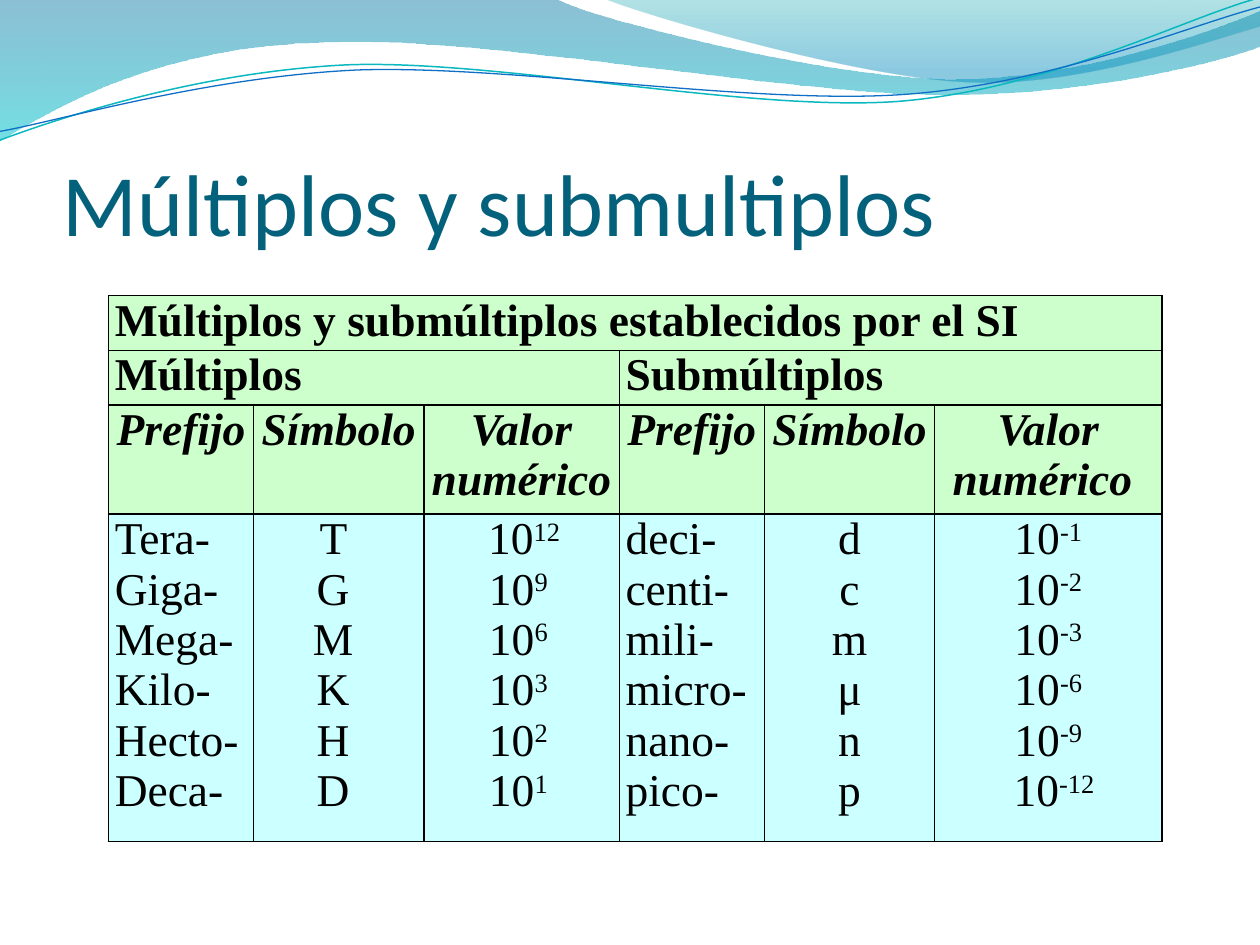
from lxml.etree import SubElement
from pptx import Presentation
from pptx.dml.color import RGBColor
from pptx.enum.text import MSO_ANCHOR, PP_ALIGN
from pptx.oxml import parse_xml
from pptx.oxml.ns import nsdecls, qn
from pptx.util import Pt

COLORS = {
    "title": "04617B", "text": "000000", "border": "000000",
    "header": "CCFFCC", "body": "CCFFFF",
    "teal_line": "0AB8BF", "blue_line": "0F6FC6",
    "deep_blue": "0074A1", "cyan": "00C6CF", "teal": "00A1A9", "sky": "008BBF",
}
TITLE_FONT = {"name": "Calibri", "size": Pt(50), "bold": False}
TABLE_FONT = {"name": "Times New Roman", "size": Pt(26)}

# Each wave: start point, then line ends (2 numbers) or Bézier curves (6 numbers)
BANDS = [
    ([(0, 0), (317, -1), (343, 12, 478, 45, 546, 45), (614, 45, 690, 19, 720, 6),
      (721, 26), (708, 32, 626, 55, 537, 54), (448, 54, 275, 20, 185, 24),
      (93, 26, 33, 60, -1, 81)],
     [(0, "deep_blue", 45), (1, "cyan", 55)]),
    ([(345, -1), (366, 8, 491, 45, 554, 47), (616, 50, 692, 23, 720, 15), (720, 0)],
     [(0, "teal", 30), (0.8, "sky", 45)]),
]
# Drawn level, then tilted
LINE_TILT = -2.7
LINES = [
    ([(-1.4, 63.1), (34.1, 51.7, 114.3, 29.4, 199.4, 29.5),
      (285.4, 30.5, 425.9, 67.2, 512, 65.2),
      (599.3, 62.3, 676.1, 25.9, 720.6, 15.9)], "teal_line", 0.85),
    ([(-1.1, 58.1), (33.1, 53.7, 118.2, 32.6, 204.3, 32.7),
      (290.3, 33.7, 429.1, 63.3, 515.3, 61.4),
      (601.5, 59.4, 678.9, 30, 721.4, 21)], "blue_line", 0.75),
]

COLUMN_WIDTHS = [83, 97.2, 111.7, 83, 97.2, 129.8]
# Least heights: rows grow to fit their text
ROW_HEIGHTS = [0, 20, 26, 26]
# Row, first column, last column, text
MERGED_HEADERS = [
    (0, 0, 5, "Múltiplos y submúltiplos establecidos por el SI"),
    (1, 0, 2, "Múltiplos"),
    (1, 3, 5, "Submúltiplos"),
]
COLUMN_HEADERS = ["Prefijo ", "Símbolo ", "Valor numérico "] * 2
# Each column is a list of paragraphs, each a base text and an exponent
BODY_COLUMNS = [
    [(name, "") for name in ("Tera-", "Giga-", "Mega-", "Kilo-", "Hecto-", "Deca-")],
    [(symbol + " ", "") for symbol in "TGMKHD"],
    [(" 10", "12 ")] + [("10", f"{power} ") for power in (9, 6, 3, 2, 1)],
    [(name, "") for name in ("deci- ", "centi- ", "mili- ", "micro- ", "nano-", "pico-")],
    [(symbol, "") for symbol in "dcmμnp"],
    [("10", f"-{power}") for power in (1, 2, 3, 6, 9)] + [(" 10", "-12")],
]


def color(name):
    return RGBColor.from_string(COLORS[name])


def set_all(target, values):
    for name, value in values.items():
        setattr(target, name, value)


def add_run(paragraph, text, font_values, color_name, exponent=False):
    run = paragraph.add_run()
    run.text = text
    set_all(run.font, font_values)
    run.font.color.rgb = color(color_name)
    if exponent:
        run.font._element.set("baseline", "30000")


def add_wave(slide, left, top, segments, closed):
    points = [(Pt(left + segment[i]), Pt(top + segment[i + 1]))
              for segment in segments for i in range(0, len(segment), 2)]
    builder = slide.shapes.build_freeform(*points[0])
    builder.add_line_segments(points[1:], close=False)
    shape = builder.convert_to_shape()
    shape.shadow.inherit = False
    # Turn each run of three points into one curve
    outline = next(shape._element.iter(qn("a:path")))
    steps = iter(outline.findall(qn("a:lnTo")))
    for segment in segments[1:]:
        step = next(steps)
        if len(segment) == 6:
            step.tag = qn("a:cubicBezTo")
            for _ in range(2):
                extra = next(steps)
                step.append(extra[0])
                outline.remove(extra)
    if closed:
        SubElement(outline, qn("a:close"))
    return shape


def add_waves(slide, left, top):
    # Translucent gradient bands
    for segments, stops in BANDS:
        shape = add_wave(slide, left, top, segments, closed=True)
        shape.line.fill.background()
        shape.fill.gradient()
        shape.fill.gradient_angle = 270
        for stop, (position, name, _) in zip(shape.fill.gradient_stops, stops):
            stop.position = position
            stop.color.rgb = color(name)
        for element, (_, _, opacity) in zip(shape._element.iter(qn("a:gs")), stops):
            SubElement(element[0], qn("a:alpha")).set("val", str(opacity * 1000))
    # Thin lines
    for segments, name, width in LINES:
        shape = add_wave(slide, left, top, segments, closed=False)
        shape.rotation = LINE_TILT
        shape.fill.background()
        shape.line.color.rgb = color(name)
        shape.line.width = Pt(width)


def add_title(slide, left, top, width, height):
    box = slide.shapes.add_textbox(Pt(left), Pt(top), Pt(width), Pt(height))
    set_all(box.text_frame, {
        "word_wrap": True, "vertical_anchor": MSO_ANCHOR.BOTTOM,
        "margin_left": 0, "margin_right": 0, "margin_top": Pt(3.6), "margin_bottom": 0,
    })
    add_run(box.text_frame.paragraphs[0], "Múltiplos y submultiplos", TITLE_FONT, "title")


def style_cell(cell, fill_name):
    set_all(cell, {"margin_left": Pt(3.6), "margin_right": Pt(3.6),
                   "margin_top": 0, "margin_bottom": 0})
    cell.fill.solid()
    cell.fill.fore_color.rgb = color(fill_name)
    properties = cell._tc.get_or_add_tcPr()
    for index, side in enumerate("LRTB"):
        properties.insert(index, parse_xml(
            f'<a:ln{side} {nsdecls("a")} w="{Pt(1)}"><a:solidFill>'
            f'<a:srgbClr val="{COLORS["border"]}"/></a:solidFill></a:ln{side}>'))


def fill_cell(cell, lines, alignment, **font_values):
    frame = cell.text_frame
    for index, (base, exponent) in enumerate(lines):
        paragraph = frame.add_paragraph() if index else frame.paragraphs[0]
        paragraph.alignment = alignment
        add_run(paragraph, base, TABLE_FONT | font_values, "text")
        if exponent:
            add_run(paragraph, exponent, TABLE_FONT | font_values, "text", exponent=True)


def add_prefix_table(slide, left, top, height):
    frame = slide.shapes.add_table(
        len(ROW_HEIGHTS), len(COLUMN_WIDTHS), Pt(left), Pt(top),
        Pt(sum(COLUMN_WIDTHS)), Pt(height))
    table = frame.table
    set_all(table, {"first_row": False, "horz_banding": False})
    for column, width in zip(table.columns, COLUMN_WIDTHS):
        column.width = Pt(width)
    for index, (row, row_height) in enumerate(zip(table.rows, ROW_HEIGHTS)):
        row.height = Pt(row_height)
        for cell in row.cells:
            style_cell(cell, "header" if index < 3 else "body")
    frame.height = Pt(height)
    # Merged headings
    for row, first, last, text in MERGED_HEADERS:
        table.cell(row, first).merge(table.cell(row, last))
        fill_cell(table.cell(row, first), [(text, "")], PP_ALIGN.LEFT, bold=True)
    # Column headings and values
    for column, (heading, lines) in enumerate(zip(COLUMN_HEADERS, BODY_COLUMNS)):
        fill_cell(table.cell(2, column), [(heading, "")], PP_ALIGN.CENTER,
                  bold=True, italic=True)
        alignment = PP_ALIGN.CENTER if column % 3 else PP_ALIGN.JUSTIFY
        fill_cell(table.cell(3, column), lines, alignment, bold=False)


def main():
    presentation = Presentation()
    set_all(presentation, {"slide_width": Pt(720), "slide_height": Pt(540)})
    slide = presentation.slides.add_slide(presentation.slide_layouts[6])
    add_waves(slide, 0, 0)
    add_title(slide, 36, 55.2, 648, 90)
    add_prefix_table(slide, 62, 169, 312)
    presentation.save("out.pptx")


if __name__ == "__main__":
    main()
